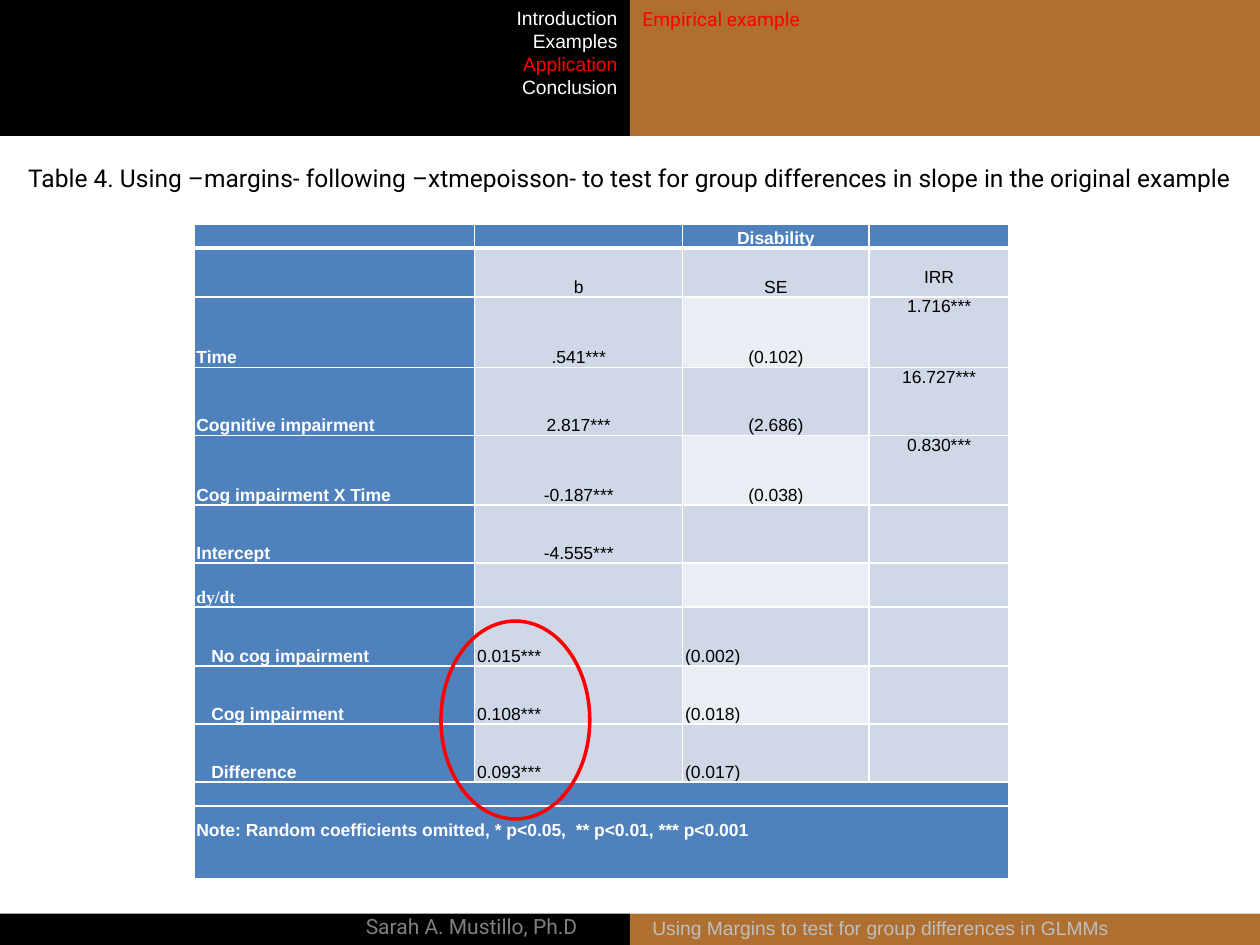
from lxml.etree import SubElement as SubEl
from pptx import Presentation as Deck
from pptx.dml.color import RGBColor as Rgb
from pptx.enum.shapes import MSO_SHAPE as Kind
from pptx.enum.text import MSO_ANCHOR as Anchor, PP_ALIGN as Align
from pptx.oxml.ns import qn
from pptx.util import Cm, Pt

BLACK, WHITE, RED = "000000", "FFFFFF", "FF0000"
BROWN, BLUE, PALE, LIGHT = "AE6F30", "4F81BD", "D0D8E8", "E9EDF4"
WIDE, HALF = 25.4, 12.7

COLS = [5.66, 4.19, 3.76, 2.82]
# Row height, then the cell texts
ROWS = [
    (0.48, ["", "", "Disability", ""]),
    (0.99, ["", "b", "SE", "IRR"]),
    (1.42, ["Time", ".541***", "(0.102)", "1.716***"]),
    (1.37, ["Cognitive impairment", "2.817***", "(2.686)", "16.727***"]),
    (1.40, ["Cog impairment X Time", "-0.187***", "(0.038)", "0.830***"]),
    (1.17, ["Intercept", "-4.555***", "", ""]),
    (0.89, ["dy/dt", "", "", ""]),
    (1.19, ["No cog impairment", "0.015***", "(0.002)", ""]),
    (1.17, ["Cog impairment", "0.108***", "(0.018)", ""]),
    (1.17, ["Difference", "0.093***", "(0.017)", ""]),
    (0.48, [""]),
    (1.47, ["Note: Random coefficients omitted, * p<0.05,  ** p<0.01, *** p<0.001"]),
]
SLOPES = range(7, 10)  # rows of the dy/dt group


def color(code):
    return Rgb.from_string(code)


class Page:
    """Holds the text style and the current slide."""

    font, size = "Arial", 11

    def __init__(self, slide):
        self.slide = slide
        self.shapes = slide.shapes

    def put(self, para, text, ink, font=None, size=None, bold=False, align=Align.LEFT):
        """Add one styled run to a paragraph."""
        para.alignment = align
        run = para.add_run()
        run.text = text
        face = run.font
        face.name, face.size = font or self.font, Pt(size or self.size)
        face.bold, face.color.rgb = bold, color(ink)

    def title(self, text, x, y, w, h):
        title = self.shapes.title
        title.left, title.top, title.width, title.height = map(Cm, (x, y, w, h))
        title.text_frame.vertical_anchor = Anchor.MIDDLE
        self.put(title.text_frame.paragraphs[0], text, BLACK, "Roboto", 14,
                 align=Align.CENTER)

    def shape(self, kind, x, y, w, h, fill=None, line=None):
        shape = self.shapes.add_shape(kind, *map(Cm, (x, y, w, h)))
        shape.shadow.inherit = False
        if fill:
            shape.fill.solid()
            shape.fill.fore_color.rgb = color(fill)
        else:
            shape.fill.background()
        if line:
            shape.line.color.rgb = color(line)
            shape.line.width = Pt(2)
        else:
            shape.line.fill.background()

    def text(self, lines, x, y, w, h, **style):
        """Set (text, ink) pairs, one to a paragraph."""
        frame = self.shapes.add_textbox(*map(Cm, (x, y, w, h))).text_frame
        frame.word_wrap = True
        for i, (text, ink) in enumerate(lines):
            para = frame.add_paragraph() if i else frame.paragraphs[0]
            self.put(para, text, ink, **style)

    def border(self, cell, base):
        """Draw four white edges, the bottom one base points wide."""
        props = cell._tc.get_or_add_tcPr()
        for i, (tag, width) in enumerate(zip(("lnL", "lnR", "lnT", "lnB"), (1, 1, 1, base))):
            edge = props.makeelement(qn("a:" + tag), {"w": str(Pt(width))})
            fill = SubEl(edge, qn("a:solidFill"))
            SubEl(fill, qn("a:srgbClr"), val=WHITE)
            props.insert(i, edge)

    def cell(self, cell, row, col, text):
        head = row == 0 or col == 0
        shade = LIGHT if col == 2 and row % 2 == 0 else PALE
        cell.fill.solid()
        cell.fill.fore_color.rgb = color(BLUE if head else shade)
        self.border(cell, 1 if row else 3)
        cell.margin_left = cell.margin_right = Cm(0.05)
        cell.margin_top = cell.margin_bottom = 0
        cell.vertical_anchor = Anchor.TOP if col == 3 else Anchor.BOTTOM
        para = cell.text_frame.paragraphs[0]
        if not text:
            SubEl(para._p, qn("a:endParaRPr"), sz="1000")
            return
        if col == 0 and row in SLOPES:
            cell.margin_left = Cm(0.35)
        if text == "IRR":
            cell.margin_top = Cm(0.4)
        if row == len(ROWS) - 1:
            cell.margin_bottom = Cm(0.78)
        left = col == 0 or row in SLOPES
        self.put(para, text, WHITE if head else BLACK,
                 "Times New Roman" if text == "dy/dt" else None, 10, head,
                 Align.LEFT if left else Align.CENTER)

    def table(self, x, y):
        high = sum(tall for tall, _ in ROWS)
        table = self.shapes.add_table(
            len(ROWS), len(COLS), *map(Cm, (x, y, sum(COLS), high))).table
        for col, wide in zip(table.columns, COLS):
            col.width = Cm(wide)
        for r, (tall, texts) in enumerate(ROWS):
            table.rows[r].height = Cm(tall)
            if len(texts) == 1:
                table.cell(r, 0).merge(table.cell(r, len(COLS) - 1))
            for c, text in enumerate(texts):
                self.cell(table.cell(r, c), r, c, text)


def main():
    deck = Deck()
    deck.slide_width, deck.slide_height = Cm(WIDE), Cm(19.05)
    page = Page(deck.slides.add_slide(deck.slide_layouts[5]))

    for top, high in ((0, 2.74), (18.42, 0.63)):
        for left, fill in ((0, BLACK), (HALF, BROWN)):
            page.shape(Kind.RECTANGLE, left, top, HALF, high, fill)
    page.text([("Sarah A. Mustillo, Ph.D", "808080")], 0, 18.29, 11.89, 0.76,
              font="Roboto", size=12, align=Align.RIGHT)

    page.title("Table 4. Using –margins- following –xtmepoisson- to test for group "
               "differences in slope in the original example", 0, 2.74, WIDE, 1.7)
    menu = ["Introduction", "Examples", "Application", "Conclusion"]
    page.text([(name, RED if name == "Application" else WHITE) for name in menu],
              0.28, 0, 12.42, 2.13, align=Align.RIGHT)
    page.text([("Empirical example", RED)], HALF, 0.03, HALF, 0.74, font="Roboto")
    page.text([("Using Margins to test for group differences in GLMMs", "BFBFBF")],
              12.9, 18.34, 12.19, 0.74)

    page.table(3.91, 4.52)
    page.shape(Kind.OVAL, 8.89, 12.52, 3, 3.99, line=RED)
    deck.save("out.pptx")


if __name__ == "__main__":
    main()
